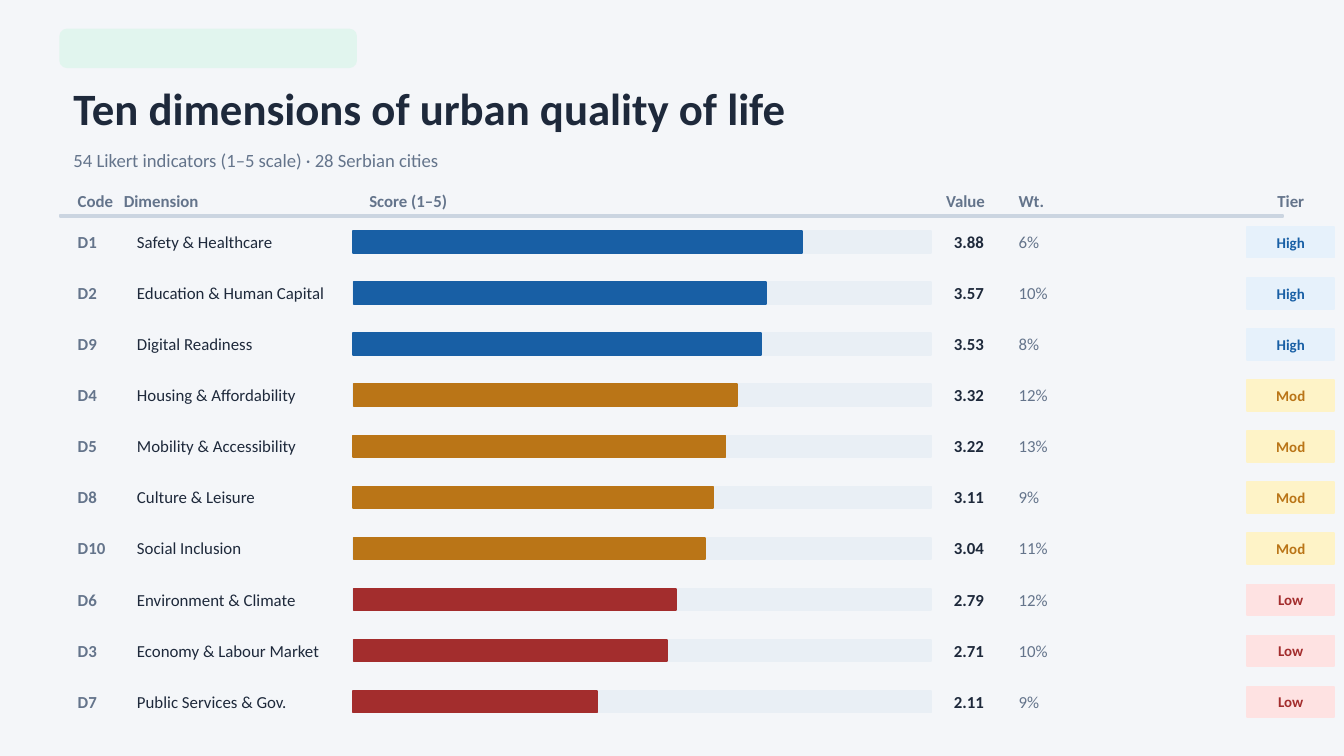
"""Build a slide that ranks ten dimensions of urban quality of life."""
from pptx import Presentation
from pptx.dml.color import RGBColor
from pptx.enum.shapes import MSO_SHAPE
from pptx.enum.text import MSO_ANCHOR, PP_ALIGN
from pptx.oxml import parse_xml
from pptx.oxml.ns import nsdecls
from pptx.util import Cm, Pt

PAPER = RGBColor(0xF4, 0xF6, 0xF9)
MINT = RGBColor(0xE1, 0xF5, 0xEE)
INK = RGBColor(0x1E, 0x29, 0x3B)
GREY = RGBColor(0x64, 0x74, 0x8B)
RULE = RGBColor(0xCB, 0xD5, 0xE1)
TRACK = RGBColor(0xE9, 0xEF, 0xF5)
TIERS = {
    "High": (RGBColor(0x18, 0x5F, 0xA5), RGBColor(0xE6, 0xF1, 0xFB)),
    "Mod": (RGBColor(0xBA, 0x75, 0x17), RGBColor(0xFE, 0xF3, 0xC7)),
    "Low": (RGBColor(0xA3, 0x2D, 0x2D), RGBColor(0xFE, 0xE2, 0xE2)),
}
ROWS = [
    ("D1", "Safety & Healthcare", 3.88, 6, "High"),
    ("D2", "Education & Human Capital", 3.57, 10, "High"),
    ("D9", "Digital Readiness", 3.53, 8, "High"),
    ("D4", "Housing & Affordability", 3.32, 12, "Mod"),
    ("D5", "Mobility & Accessibility", 3.22, 13, "Mod"),
    ("D8", "Culture & Leisure", 3.11, 9, "Mod"),
    ("D10", "Social Inclusion", 3.04, 11, "Mod"),
    ("D6", "Environment & Climate", 2.79, 12, "Low"),
    ("D3", "Economy & Labour Market", 2.71, 10, "Low"),
    ("D7", "Public Services & Gov.", 2.11, 9, "Low"),
]
HEADS = [
    ("Code\tDimension", 1.22, 6.35, PP_ALIGN.LEFT),
    ("Score (1–5)", 6.73, 11.05, PP_ALIGN.LEFT),
    ("Value", 17.63, 1.52, PP_ALIGN.LEFT),
    ("Wt.", 19, 1.52, PP_ALIGN.LEFT),
    ("Tier", 23.57, 1.65, PP_ALIGN.CENTER),
]
FIRST, STEP = 4.24, 8.69 / 9
FULL, TOP = 10.92, 5

deck = Presentation()
deck.slide_width, deck.slide_height = Cm(25.4), Cm(14.29)
slide = deck.slides.add_slide(deck.slide_layouts[6])
slide.background.fill.solid()
slide.background.fill.fore_color.rgb = PAPER


def block(x, y, w, h, color, kind=MSO_SHAPE.RECTANGLE):
    shape = slide.shapes.add_shape(kind, Cm(x), Cm(y), Cm(w), Cm(h))
    shape.shadow.inherit = False
    shape.fill.solid()
    shape.fill.fore_color.rgb = color
    shape.line.color.rgb = color
    shape.line.width = Pt(1)
    return shape


def label(text, x, y, w, h, size, color, bold=False, align=PP_ALIGN.LEFT, box=None):
    if box is None:
        box = slide.shapes.add_textbox(Cm(x), Cm(y), Cm(w), Cm(h))
    else:
        frame = box.text_frame
        frame.margin_left = frame.margin_right = 0
        frame.margin_top = frame.margin_bottom = 0
    frame = box.text_frame
    frame.word_wrap = True
    frame.vertical_anchor = MSO_ANCHOR.MIDDLE
    para = frame.paragraphs[0]
    para.text = text
    para.alignment = align
    if "\t" in text:
        tabs = f'<a:tabLst {nsdecls("a")}><a:tab pos="{Cm(0.87)}" algn="l"/></a:tabLst>'
        para._p.get_or_add_pPr().append(parse_xml(tabs))
    font = para.font
    font.name, font.size, font.bold = "Calibri", Pt(size), bold
    font.color.rgb = color


pill = block(1.14, 0.56, 5.59, 0.71, MINT, MSO_SHAPE.ROUNDED_RECTANGLE)
pill.adjustments[0] = 0.18
label("Ten dimensions of urban quality of life", 1.14, 1.4, 23.11, 1.27, 24, INK, True)
label("54 Likert indicators (1–5 scale) · 28 Serbian cities",
      1.14, 2.67, 23.11, 0.71, 10, GREY)
for text, x, w, align in HEADS:
    label(text, x, 3.51, w, 0.56, 9, GREY, True, align)
block(1.14, 4.06, 23.11, 0.05, RULE)

for i, (code, name, score, weight, tier) in enumerate(ROWS):
    y = FIRST + i * STEP
    dark, pale = TIERS[tier]
    label(code, 1.22, y, 1.07, 0.66, 9, GREY, True)
    label(name, 2.34, y, 4.22, 0.66, 9, INK)
    block(6.68, y + 0.13, FULL, 0.41, TRACK)
    block(6.68, y + 0.13, FULL * score / TOP, 0.41, dark)
    label(f"{score:.2f}", 17.78, y, 1.14, 0.66, 9, INK, True)
    label(f"{weight}%", 19, y, 1.07, 0.66, 9, GREY)
    spot = (23.57, y + 0.05, 1.65, 0.58)
    badge = block(*spot, pale)
    label(tier, *spot, 8, dark, True, PP_ALIGN.CENTER, badge)

deck.save("out.pptx")
